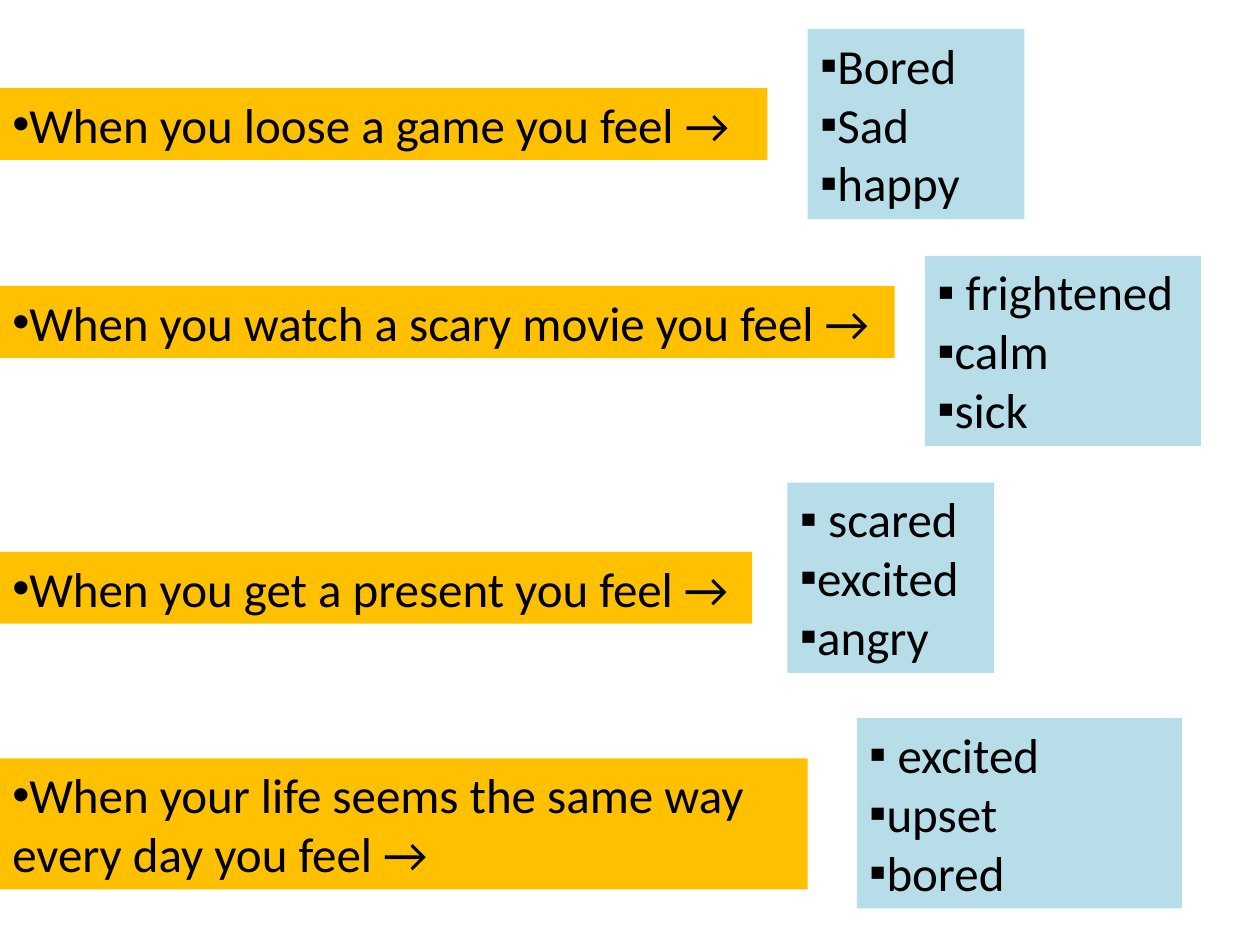
from lxml import etree
from pptx import Presentation
from pptx.dml.color import RGBColor
from pptx.enum.text import MSO_AUTO_SIZE
from pptx.oxml.ns import qn
from pptx.util import Inches, Pt

GROW = MSO_AUTO_SIZE.SHAPE_TO_FIT_TEXT
COLORS = {"question": "FFC000", "answers": "B7DEE8", "text": "000000"}

deck = Presentation()
deck.slide_width, deck.slide_height = Inches(10), Inches(7.5)
page = deck.slides.add_slide(deck.slide_layouts[6])
column = deck.slide_width / 100
row = deck.slide_height / 75
line_rows, padding_rows = 4.7, 1


def add_bullets(text, left, top, width, lines, fill, bullet):
    height = lines * line_rows + padding_rows
    box = page.shapes.add_textbox(
        round(left * column), round(top * row), round(width * column), round(height * row)
    )
    box.fill.solid()
    box.fill.fore_color.rgb = RGBColor.from_string(COLORS[fill])
    frame = box.text_frame
    frame.word_wrap = True
    frame.auto_size = GROW
    frame.text = text
    for para in frame.paragraphs:
        span = para.runs[0]
        span.font.name = "Calibri"
        span.font.size = Pt(28)
        span.font.color.rgb = RGBColor.from_string(COLORS["text"])
        properties = para._p.get_or_add_pPr()
        properties.set("marL", "0")
        properties.set("indent", "0")
        etree.SubElement(properties, qn("a:buFont")).set("typeface", "Arial")
        etree.SubElement(properties, qn("a:buChar")).set("char", bullet)


exercises = [
    ("When you loose a game you feel →", 7, 60.9, 1,
     "Bored\nSad\nhappy", 64.1, 2.3, 17.2),
    ("When you watch a scary movie you feel →", 22.7, 71, 1,
     " frightened\ncalm\nsick", 73.4, 20.3, 21.9),
    ("When you get a present you feel →", 43.8, 59.7, 1,
     " scared\nexcited\nangry", 62.5, 38.3, 16.4),
    ("When your life seems the same way every day you feel →", 60.2, 64.1, 2,
     " excited\nupset\nbored", 68, 57, 25.8),
]

for question, top, width, lines, answers, answers_left, answers_top, answers_width in exercises:
    add_bullets(question, left=0, top=top, width=width, lines=lines,
                fill="question", bullet="•")
    add_bullets(answers, left=answers_left, top=answers_top, width=answers_width, lines=3,
                fill="answers", bullet="▪")

deck.save("out.pptx")
